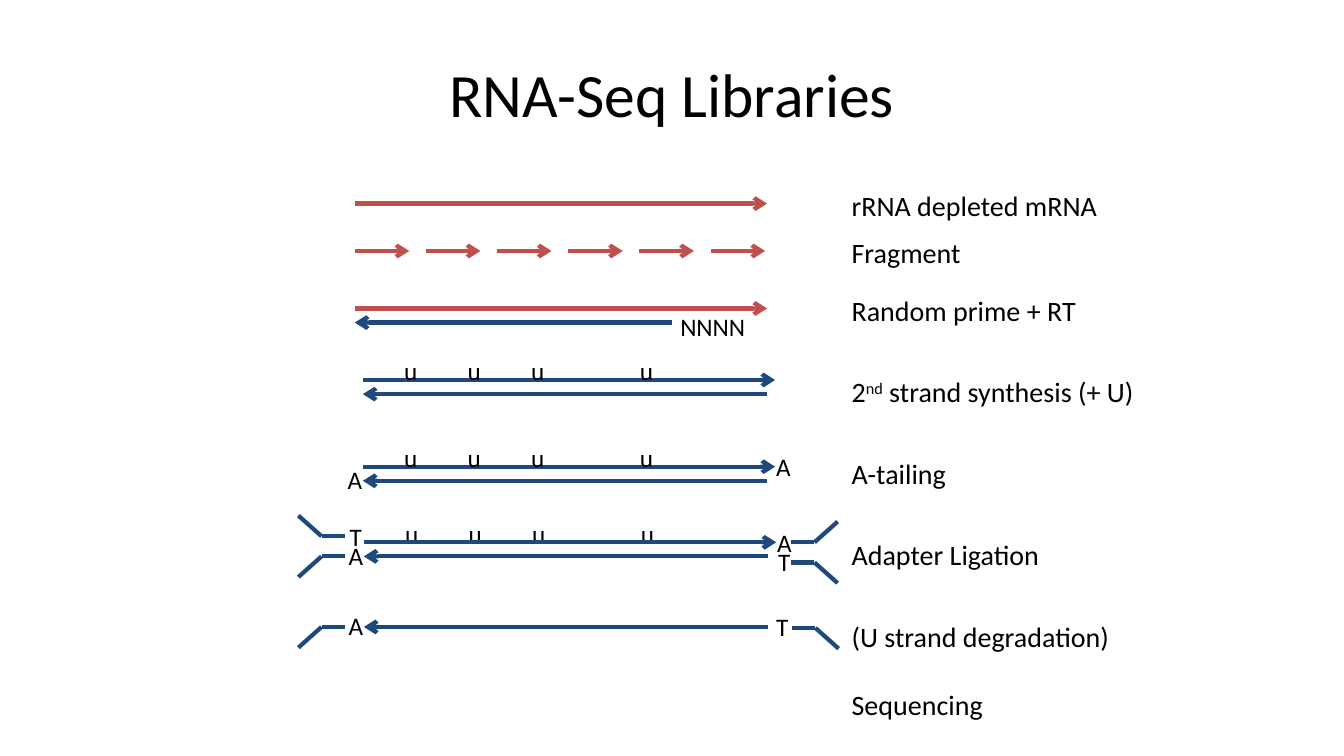
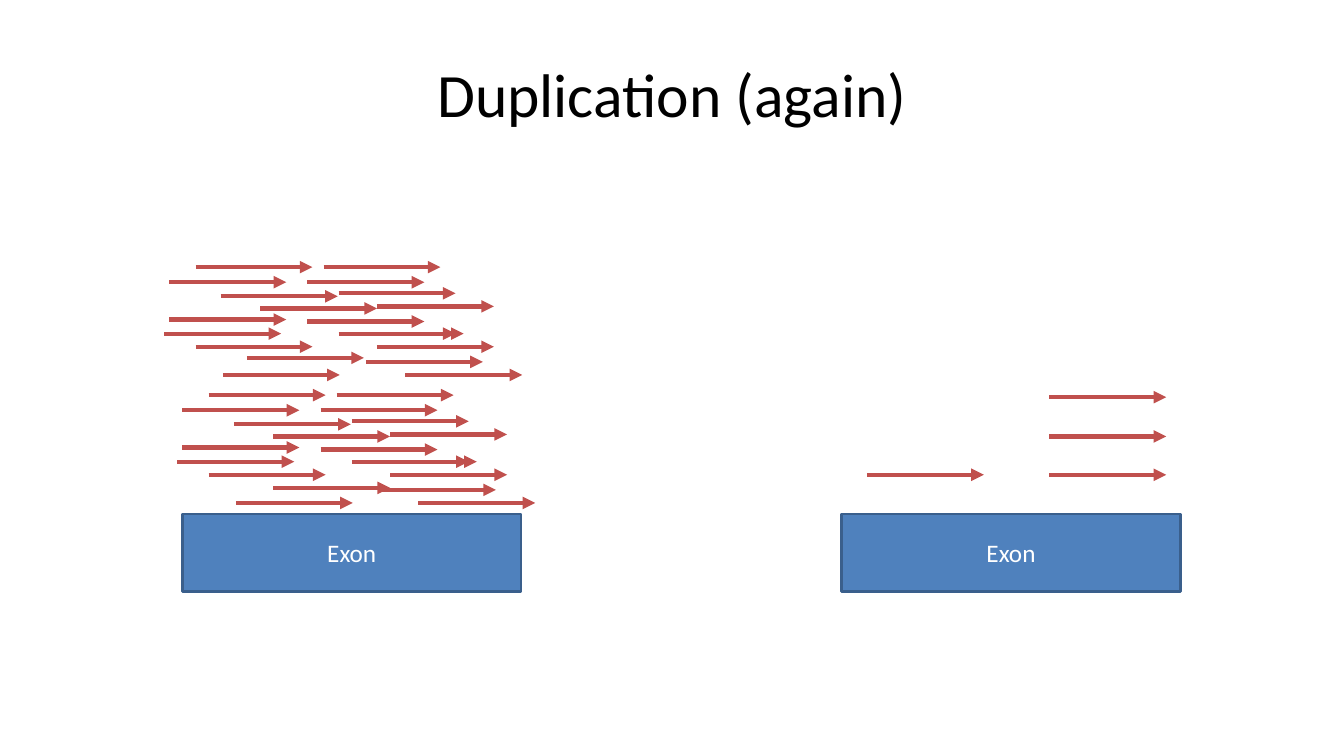
from lxml.etree import SubElement
from pptx import Presentation
from pptx.dml.color import RGBColor
from pptx.enum.shapes import MSO_CONNECTOR, MSO_SHAPE
from pptx.enum.text import MSO_ANCHOR, MSO_AUTO_SIZE, PP_ALIGN
from pptx.oxml.ns import qn
from pptx.util import Inches, Pt

COLORS = {
    "text": "000000",
    "light": "FFFFFF",
    "rna": "C0504D",
    "dna": "1F497D",
    "exon": "4F81BD",
    "exon_border": "3A5F8C",
}
FONT = "Calibri"

# All positions are in columns and rows of a square grid.
CELL = 0.1
SLIDE_COLUMNS, SLIDE_ROWS = 133.33, 75

STRAND_LENGTH = 40.9
STRAND_OVERHANG = 0.8
STRAND_GAP = 1.4
RNA_LEFT = 35.2
DNA_LEFT = 36
URACIL_OFFSETS = (3.1, 9.4, 15.7, 26.5)

# Each step: label and the space before it in points; ^ marks superscript.
STEPS = (
    ("rRNA depleted mRNA", 0),
    ("Fragment", 9.8),
    ("Random prime + RT", 17.1),
    ("2^nd^ strand synthesis (+ U)", 34.2),
    ("A-tailing", 34.2),
    ("Adapter Ligation", 34.2),
    ("(U strand degradation)", 34.2),
    ("Sequencing", 24.4),
)

EXON_TOP, EXON_WIDTH, EXON_HEIGHT = 51, 33.6, 7.7
READ_LENGTH = 11.6
# Height above the exon: offsets of the reads from the exon's left edge.
DEEP_READS = {
    1.1: (5.3, 23.4),
    2.4: (19.5,),
    3.9: (2.6, 20.6),
    5.2: (-0.5, 16.8, 17.6),
    6.4: (13.7,),
    6.6: (0,),
    7.7: (9,),
    7.9: (20.6,),
    8.9: (5.1,),
    9.2: (16.8,),
    10.3: (0, 13.7),
    11.8: (2.6, 15.3),
}
EXTRA_READS = {2.6: (9,), 15.5: (6.4,)}
SPARSE_READS = {3.9: (2.5, 20.6), 7.7: (20.6,), 11.6: (20.6,)}


def grid(*cells):
    return [Inches(cell * CELL) for cell in cells]


def color(name):
    return RGBColor.from_string(COLORS[name])


def write(shape, *texts, size=18, fill="text", align=PP_ALIGN.LEFT,
          anchor=MSO_ANCHOR.TOP, wrap=True, gaps=(0,)):
    """Write one paragraph per text; every second part split by ^ is superscript."""
    frame = shape.text_frame
    frame.word_wrap = wrap
    frame.auto_size = MSO_AUTO_SIZE.NONE if wrap else MSO_AUTO_SIZE.SHAPE_TO_FIT_TEXT
    frame.vertical_anchor = anchor
    for index, (text, gap) in enumerate(zip(texts, gaps)):
        paragraph = frame.add_paragraph() if index else frame.paragraphs[0]
        paragraph.alignment = align
        paragraph.space_before = Pt(gap)
        for part_index, part in enumerate(text.split("^")):
            run = paragraph.add_run()
            run.text = part
            run.font.name = FONT
            run.font.size = Pt(size)
            run.font.color.rgb = color(fill)
            if part_index % 2:
                run.font._element.set("baseline", "30000")


def add_text(slide, left, top, width, height, *texts, **text_format):
    box = slide.shapes.add_textbox(*grid(left, top, width, height))
    write(box, *texts, **text_format)


def add_letters(slide, left, top, text, width=3.5):
    add_text(slide, left, top, width, 4, text, wrap=False)


def add_line(slide, start, end, stroke, arrowhead=None):
    line = slide.shapes.add_connector(MSO_CONNECTOR.STRAIGHT, *grid(*start, *end))
    line.line.color.rgb = color(stroke)
    line.line.width = Pt(3)
    if arrowhead:
        SubElement(line.line._get_or_add_ln(), qn("a:tailEnd"), type=arrowhead)
    SubElement(line._element.spPr, qn("a:effectLst"))


def add_titled_slide(presentation, title):
    slide = presentation.slides.add_slide(presentation.slide_layouts[6])
    add_text(slide, 6.67, 3, SLIDE_COLUMNS - 2 * 6.67, 12.5, title, size=44,
             align=PP_ALIGN.CENTER, anchor=MSO_ANCHOR.MIDDLE)
    return slide


def add_forward_strand(slide, left, row, stroke, length=STRAND_LENGTH):
    add_line(slide, (left, row), (left + length, row), stroke, "arrow")


def add_reverse_strand(slide, left, row, length=STRAND_LENGTH - STRAND_OVERHANG):
    add_line(slide, (left + length, row), (left, row), "dna", "arrow")


def add_duplex(slide, left, row):
    add_forward_strand(slide, left, row, "dna")
    add_reverse_strand(slide, left, row + STRAND_GAP)


def add_uracils(slide, left, row):
    for offset in URACIL_OFFSETS:
        add_letters(slide, left + offset, row - 2.9, "u")


def add_a_tails(slide, left, row):
    add_letters(slide, left + 40, row - 2, "A")
    add_letters(slide, left - 2.5, row - 0.7, "A")


def add_adapter(slide, column, row, outward, vertical):
    """Draw a stem and its bent end; the directions are 1 or -1."""
    bend = column + 2.3 * outward
    add_line(slide, (column, row), (bend, row), "dna")
    add_line(slide, (bend, row), (bend + 2.3 * outward, row + 2.05 * vertical), "dna")


def add_exon(slide, left):
    exon = slide.shapes.add_shape(
        MSO_SHAPE.RECTANGLE, *grid(left, EXON_TOP, EXON_WIDTH, EXON_HEIGHT))
    exon.shadow.inherit = False
    exon.fill.solid()
    exon.fill.fore_color.rgb = color("exon")
    exon.line.color.rgb = color("exon_border")
    exon.line.width = Pt(2)
    write(exon, "Exon", fill="light", align=PP_ALIGN.CENTER, anchor=MSO_ANCHOR.MIDDLE)


def add_reads(slide, exon_left, reads, shift=0, lift=0):
    for height, offsets in reads.items():
        row = EXON_TOP - height - lift
        for offset in offsets:
            left = exon_left + offset + shift
            add_line(slide, (left, row), (left + READ_LENGTH, row), "rna", "triangle")


def add_libraries_slide(presentation):
    slide = add_titled_slide(presentation, "RNA-Seq Libraries")
    labels, gaps = zip(*STEPS)
    add_text(slide, 83.5, 18.2, 30.5, 53.9, *labels, size=20, wrap=False, gaps=gaps)

    add_forward_strand(slide, RNA_LEFT, 20.2, "rna")
    for fragment in range(6):
        add_forward_strand(slide, RNA_LEFT + 7.06 * fragment, 24.9, "rna", length=5.4)

    add_forward_strand(slide, RNA_LEFT, 30.6, "rna")
    add_letters(slide, 66.5, 30.4, "NNNN", width=8.5)
    add_reverse_strand(slide, RNA_LEFT, 32, length=31.5)

    for row in (37.7, 46.3):
        add_duplex(slide, DNA_LEFT, row)
        add_uracils(slide, DNA_LEFT, row)
    add_a_tails(slide, DNA_LEFT, 46.3)

    ligated_left, ligated_row = DNA_LEFT + 0.1, 53.8
    add_uracils(slide, ligated_left, ligated_row)
    add_duplex(slide, ligated_left, ligated_row)
    add_a_tails(slide, ligated_left, ligated_row)
    add_letters(slide, ligated_left - 2.4, ligated_row - 2.6, "T", width=3.2)
    add_letters(slide, ligated_left + 40.1, ligated_row - 0.1, "T", width=3.2)
    for column, row, outward in ((34.2, 53.2, -1), (78.5, 53.8, 1)):
        add_adapter(slide, column, row, outward, -1)
        add_adapter(slide, column, row + 2, outward, 1)

    single_row = 62.2
    add_reverse_strand(slide, ligated_left, single_row)
    add_letters(slide, ligated_left - 2.5, single_row - 2.1, "A")
    add_letters(slide, ligated_left + 39.9, single_row - 2, "T", width=3.2)
    add_adapter(slide, 34.2, single_row, -1, 1)
    add_adapter(slide, 78.6, single_row + 0.1, 1, 1)


def add_duplication_slide(presentation):
    slide = add_titled_slide(presentation, "Duplication (again)")
    deep_left, sparse_left = 18.1, 83.5
    for left in (sparse_left, deep_left):
        add_exon(slide, left)
    add_reads(slide, sparse_left, SPARSE_READS)
    add_reads(slide, deep_left, DEEP_READS)
    add_reads(slide, deep_left, DEEP_READS, shift=-1.3, lift=12.7)
    add_reads(slide, deep_left, EXTRA_READS)


def main():
    presentation = Presentation()
    presentation.slide_width, presentation.slide_height = grid(SLIDE_COLUMNS, SLIDE_ROWS)
    add_libraries_slide(presentation)
    add_duplication_slide(presentation)
    presentation.save("out.pptx")


if __name__ == "__main__":
    main()
